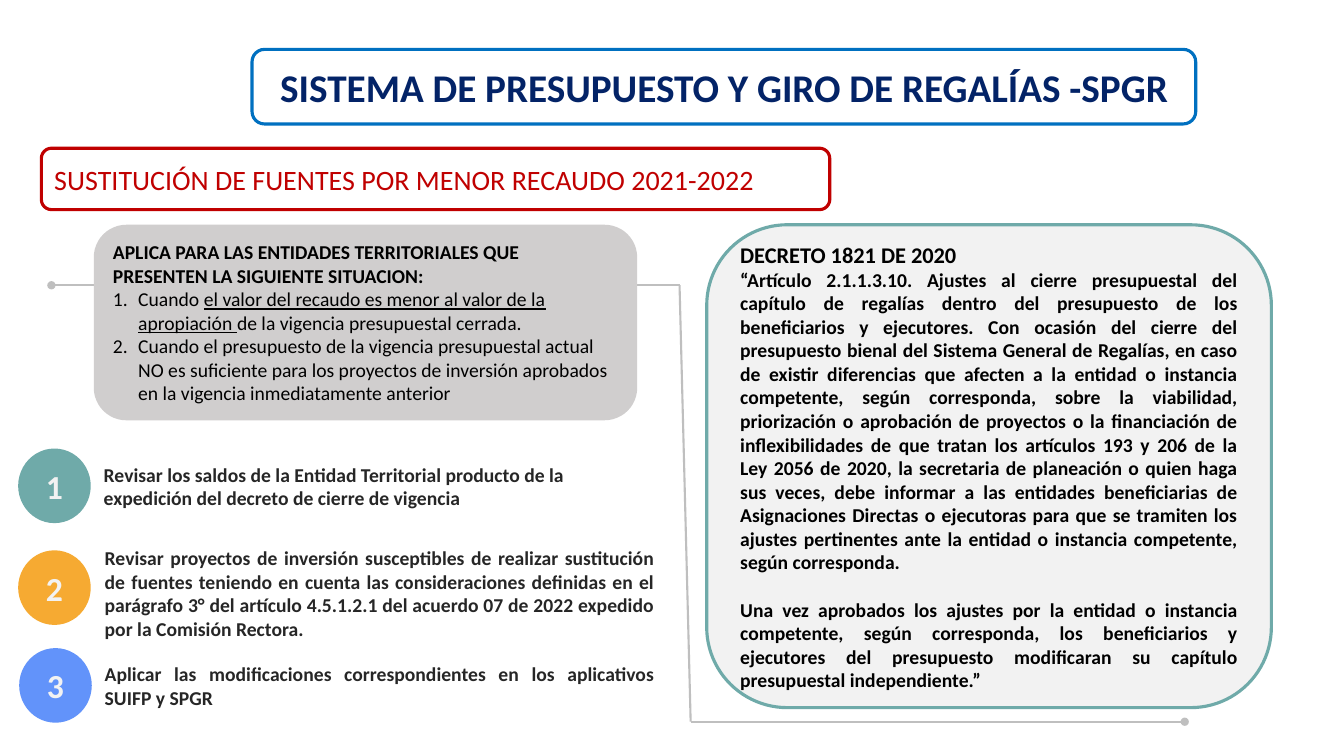
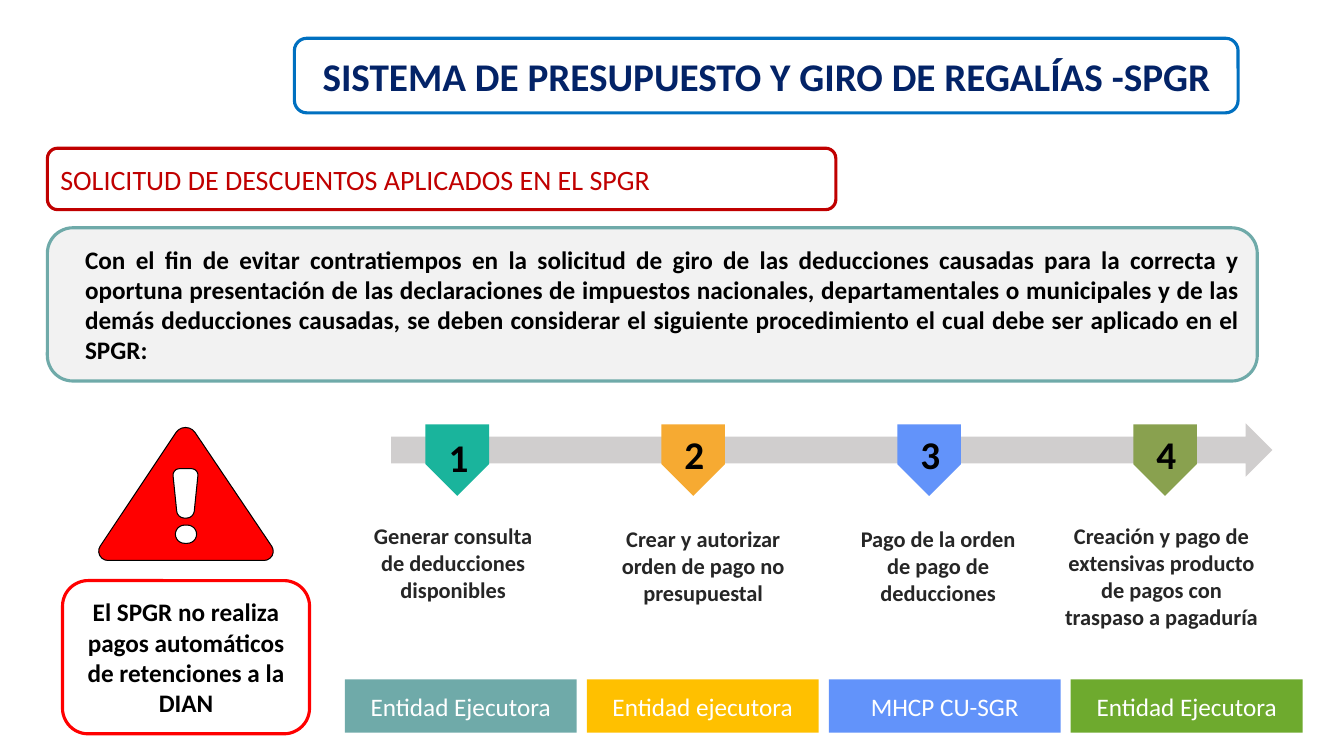
"""Two slides on the royalties budget and payment system."""
from dataclasses import dataclass
from math import dist
from typing import NamedTuple

from lxml import etree
from pptx import Presentation
from pptx.dml.color import RGBColor
from pptx.enum.shapes import MSO_CONNECTOR, MSO_SHAPE
from pptx.enum.text import MSO_ANCHOR, MSO_AUTO_SIZE, PP_ALIGN
from pptx.oxml.ns import qn
from pptx.util import Inches, Pt

ROUNDED, RECTANGLE, OVAL = MSO_SHAPE.ROUNDED_RECTANGLE, MSO_SHAPE.RECTANGLE, MSO_SHAPE.OVAL
PENTAGON, RIGHT_ARROW = MSO_SHAPE.PENTAGON, MSO_SHAPE.RIGHT_ARROW
STRAIGHT = MSO_CONNECTOR.STRAIGHT
LEFT, CENTER, JUSTIFY = PP_ALIGN.LEFT, PP_ALIGN.CENTER, PP_ALIGN.JUSTIFY
MIDDLE, NO_AUTOSIZE = MSO_ANCHOR.MIDDLE, MSO_AUTO_SIZE.NONE

BLACK = RGBColor(0x00, 0x00, 0x00)
WHITE = RGBColor(0xFF, 0xFF, 0xFF)
CHARCOAL = RGBColor(0x26, 0x26, 0x26)
PALE_GRAY = RGBColor(0xF2, 0xF2, 0xF2)
SILVER = RGBColor(0xD0, 0xCE, 0xCE)
LINE_GRAY = RGBColor(0xBF, 0xBF, 0xBF)
NAVY = RGBColor(0x03, 0x23, 0x67)
BLUE = RGBColor(0x00, 0x70, 0xC0)
PERIWINKLE = RGBColor(0x62, 0x93, 0xFA)
TEAL = RGBColor(0x6F, 0xAA, 0xA9)
EMERALD = RGBColor(0x1A, 0xB4, 0x9C)
ORANGE = RGBColor(0xF6, 0xAA, 0x32)
AMBER = RGBColor(0xFF, 0xC0, 0x00)
OLIVE = RGBColor(0x89, 0xA1, 0x4F)
GREEN = RGBColor(0x6E, 0xAA, 0x2E)
DARK_RED = RGBColor(0xC0, 0x00, 0x00)
RED = RGBColor(0xFF, 0x00, 0x00)

FONT = "Calibri"
FRAME_WIDTH = 2.25
TITLE = "SISTEMA DE PRESUPUESTO Y GIRO DE REGALÍAS -SPGR"


@dataclass(frozen=True)
class TextStyle:
    """Size, colour, weight and alignment of a text."""
    size: int
    color: RGBColor
    bold: bool = True
    align: PP_ALIGN = CENTER


class Step(NamedTuple):
    """One step of the deductions timeline."""
    color: RGBColor
    number_top: float
    caption_box: tuple
    caption: str
    owner_color: RGBColor
    owner: str


TITLE_STYLE = TextStyle(28, NAVY)
HEADING_STYLE = TextStyle(20, DARK_RED, False, LEFT)
CARD_HEADING = TextStyle(14, BLACK, True, LEFT)
CARD_ITEM = TextStyle(14, BLACK, False, LEFT)
DECREE_HEADING = TextStyle(16, BLACK, True, JUSTIFY)
DECREE_TEXT = TextStyle(14, BLACK, True, JUSTIFY)
CIRCLE_NUMBER = TextStyle(24, PALE_GRAY)
REVIEW_LEFT = TextStyle(14, CHARCOAL, True, LEFT)
REVIEW_JUSTIFIED = TextStyle(14, CHARCOAL, True, JUSTIFY)
INTRODUCTION = TextStyle(18, BLACK, True, JUSTIFY)
STEP_NUMBER = TextStyle(28, BLACK, True, LEFT)
STEP_CAPTION = TextStyle(16, CHARCOAL)
OWNER = TextStyle(18, WHITE, False)
WARNING = TextStyle(18, BLACK)

DECREE_ARTICLE = (
    "“Artículo 2.1.1.3.10. Ajustes al cierre presupuestal del capítulo de regalías dentro del "
    "presupuesto de los beneficiarios y ejecutores. Con ocasión del cierre del presupuesto bienal "
    "del Sistema General de Regalías, en caso de existir diferencias que afecten a la entidad o "
    "instancia competente, según corresponda, sobre la viabilidad, priorización o aprobación de "
    "proyectos o la financiación de inflexibilidades de que tratan los artículos 193 y 206 de la "
    "Ley 2056 de 2020, la secretaria de planeación o quien haga sus veces, debe informar a las "
    "entidades beneficiarias de Asignaciones Directas o ejecutoras para que se tramiten los ajustes "
    "pertinentes ante la entidad o instancia competente, según corresponda.")
DECREE_CLOSING = (
    "Una vez aprobados los ajustes por la entidad o instancia competente, según corresponda, los "
    "beneficiarios y ejecutores del presupuesto modificaran su capítulo presupuestal independiente.”")

REVIEWS = [
    (0.18, 4.45, TEAL, (0.93, 4.54, 5.65, 0.57), REVIEW_LEFT,
     "Revisar los saldos de la Entidad Territorial producto de la expedición del decreto de cierre "
     "de vigencia"),
    (0.18, 5.46, ORANGE, (0.94, 5.37, 5.65, 1.04), REVIEW_JUSTIFIED,
     "Revisar proyectos de inversión susceptibles de realizar sustitución de fuentes teniendo en "
     "cuenta las consideraciones definidas en el parágrafo 3° del artículo 4.5.1.2.1 del acuerdo 07 "
     "de 2022 expedido por la Comisión Rectora."),
    (0.19, 6.43, PERIWINKLE, (0.94, 6.52, 5.65, 0.57), REVIEW_JUSTIFIED,
     "Aplicar las modificaciones correspondientes en los aplicativos SUIFP y SPGR"),
]

STEPS = [
    Step(EMERALD, 4.25, (3.53, 5.13, 1.93, 0.91), "Generar consulta de deducciones disponibles",
         TEAL, "Entidad Ejecutora"),
    Step(ORANGE, 4.22, (6.01, 5.16, 1.93, 0.91), "Crear y autorizar orden de pago no presupuestal",
         AMBER, "Entidad ejecutora"),
    Step(PERIWINKLE, 4.22, (8.34, 5.16, 1.93, 0.91), "Pago de la orden de pago de deducciones",
         PERIWINKLE, "MHCP CU-SGR"),
    Step(OLIVE, 4.22, (10.41, 5.13, 2.22, 1.18),
         "Creación y pago de extensivas producto de pagos con traspaso a pagaduría",
         GREEN, "Entidad Ejecutora"),
]


def add_run(paragraph, text, style, underline=False):
    """Add one formatted run."""
    run = paragraph.add_run()
    run.text = text
    run.font.name = FONT
    run.font.size = Pt(style.size)
    run.font.bold = style.bold
    run.font.underline = underline
    run.font.color.rgb = style.color


def start_paragraph(frame, style, space_before=0):
    """Return the frame's next free paragraph, aligned and spaced."""
    first = frame.paragraphs[0]
    paragraph = frame.add_paragraph() if first.runs else first
    paragraph.alignment = style.align
    paragraph.space_before = Pt(space_before)
    return paragraph


def write(frame, text, style, space_before=0):
    """Add a paragraph of a single run."""
    paragraph = start_paragraph(frame, style, space_before)
    add_run(paragraph, text, style)
    return paragraph


def set_list_format(paragraph, indent, bullet, **attributes):
    """Give a paragraph its hanging indent and bullet element."""
    properties = paragraph._p.get_or_add_pPr()
    properties.set("marL", str(Inches(indent)))
    properties.set("indent", str(-Inches(indent)))
    etree.SubElement(properties, qn(bullet), **attributes)


def paint(shape, fill=None, line=None, width=FRAME_WIDTH):
    """Set fill and line, and remove the shadow."""
    shape.shadow.inherit = False
    if fill is None:
        shape.fill.background()
    else:
        shape.fill.solid()
        shape.fill.fore_color.rgb = fill
    if line is None:
        shape.line.fill.background()
    else:
        shape.line.color.rgb = line
        shape.line.width = Pt(width)


def add_box(slide, kind, box, fill=None, line=None, text=None, style=None):
    """Add a preset shape with optional text."""
    shape = slide.shapes.add_shape(kind, *map(Inches, box))
    paint(shape, fill, line)
    if text:
        write(shape.text_frame, text, style)
    return shape


def add_label(slide, box, text, style):
    """Add a wrapping text box."""
    frame = slide.shapes.add_textbox(*map(Inches, box)).text_frame
    frame.word_wrap = True
    write(frame, text, style)


def place_over(placeholder, shape, inset):
    """Lay a placeholder over a shape, inset at each side."""
    margin = Inches(inset)
    placeholder.left, placeholder.top = shape.left + margin, shape.top + margin
    placeholder.width, placeholder.height = shape.width - 2 * margin, shape.height - 2 * margin
    frame = placeholder.text_frame
    frame.auto_size = NO_AUTOSIZE
    frame.vertical_anchor = MIDDLE
    shape.element.addnext(placeholder.element)
    return frame


def add_line(slide, start, end, head=False, tail=False):
    """Add a grey connector with optional oval ends."""
    connector = slide.shapes.add_connector(STRAIGHT, *map(Inches, start + end))
    connector.line.color.rgb = LINE_GRAY
    connector.line.width = Pt(1.5)
    properties = connector.element.spPr
    line = properties.find(qn("a:ln"))
    for tag, wanted in (("a:headEnd", head), ("a:tailEnd", tail)):
        if wanted:
            etree.SubElement(line, qn(tag), type="oval")
    etree.SubElement(properties, qn("a:effectLst"))


def rounded_outline(corners, cut, parts=6):
    """Return the points of a polygon whose corners are circular arcs."""
    points = []
    for index, corner in enumerate(corners):
        start, end = (
            tuple(c + (n - c) * cut / dist(corner, neighbor) for c, n in zip(corner, neighbor))
            for neighbor in (corners[index - 1], corners[(index + 1) % len(corners)]))
        pull = dist(start, end) / (2 * cut)
        for part in range(parts + 1):
            t = part / parts
            weights = (1 - t) ** 2, 2 * t * (1 - t) * pull, t ** 2
            points.append(tuple(
                Inches(sum(w * v for w, v in zip(weights, values)) / sum(weights))
                for values in zip(start, corner, end)))
    return points


def add_warning_sign(slide):
    """Draw the red triangle with an exclamation mark cut out."""
    triangle = rounded_outline([(1.84, 4.15), (2.79, 5.56), (0.9, 5.56)], 0.17)
    bar = rounded_outline([(1.71, 4.65), (1.97, 4.65), (1.92, 5.14), (1.76, 5.14)], 0.07)
    dot = rounded_outline([(1.74, 5.21), (1.95, 5.21), (1.95, 5.39), (1.74, 5.39)], 0.09)
    builder = slide.shapes.build_freeform(*triangle[0])
    builder.add_line_segments(triangle[1:])
    for outline in (bar, dot):
        builder.move_to(*outline[0])
        builder.add_line_segments(outline[1:])
    paint(builder.convert_to_shape(), RED, BLACK, 0.75)


def add_slide(presentation, layout, title_corner, heading_left, heading):
    """Add a slide with its framed title and heading."""
    slide = presentation.slides.add_slide(presentation.slide_layouts[layout])
    title_frame = add_box(slide, ROUNDED, title_corner + (9.36, 0.74), line=BLUE)
    write(place_over(slide.shapes.title, title_frame, 0.04), TITLE, TITLE_STYLE)
    add_box(slide, ROUNDED, (heading_left, 1.47, 7.82, 0.61), None, DARK_RED, heading, HEADING_STYLE)
    return slide


def build_substitution(presentation):
    """Build the slide on substituting funding sources."""
    slide = add_slide(presentation, 1, (2.5, 0.49), 0.41,
                      "SUSTITUCIÓN DE FUENTES POR MENOR RECAUDO 2021-2022")
    decree = add_box(slide, ROUNDED, (7.01, 2.23, 5.6, 4.79), PALE_GRAY, TEAL,
                     "DECRETO 1821 DE 2020", DECREE_HEADING).text_frame
    write(decree, DECREE_ARTICLE, DECREE_TEXT)
    write(decree, DECREE_CLOSING, DECREE_TEXT, 17)

    add_line(slide, (0.51, 2.83), (6.74, 2.83), head=True)
    add_line(slide, (6.74, 2.83), (6.85, 7.16))
    add_line(slide, (6.85, 7.16), (11.75, 7.16), tail=True)

    card = add_box(slide, ROUNDED, (0.93, 2.23, 5.39, 1.94), SILVER)
    body = place_over(slide.placeholders[1], card, 0.09)
    heading = write(body, "APLICA PARA LAS ENTIDADES TERRITORIALES QUE PRESENTEN LA SIGUIENTE "
                    "SITUACION:", CARD_HEADING)
    set_list_format(heading, 0, "a:buNone")
    for runs in (
            [("Cuando ", False),
             ("el valor del recaudo es menor al valor de la apropiación ", True),
             ("de la vigencia presupuestal cerrada.", False)],
            [("Cuando el presupuesto de la vigencia presupuestal actual NO es suficiente para los "
              "proyectos de inversión aprobados en la vigencia inmediatamente anterior", False)]):
        item = start_paragraph(body, CARD_ITEM)
        set_list_format(item, 0.25, "a:buAutoNum", type="arabicPeriod")
        for text, underline in runs:
            add_run(item, text, CARD_ITEM, underline)

    for number, (left, top, color, box, style, text) in enumerate(REVIEWS, 1):
        add_box(slide, OVAL, (left, top, 0.72, 0.74), color, None, str(number), CIRCLE_NUMBER)
        add_label(slide, box, text, style)


def build_deductions(presentation):
    """Build the slide on requesting deductions."""
    slide = add_slide(presentation, 5, (2.92, 0.38), 0.47,
                      "SOLICITUD DE DESCUENTOS APLICADOS EN EL SPGR")
    introduction = add_box(
        slide, ROUNDED, (0.47, 2.26, 12, 1.52), PALE_GRAY, TEAL,
        "Con el fin de evitar contratiempos en la solicitud de giro de las deducciones causadas para "
        "la correcta y oportuna presentación de las declaraciones de impuestos nacionales, "
        "departamentales o municipales y de las demás deducciones causadas, se deben considerar el "
        "siguiente procedimiento el cual debe ser aplicado en el SPGR:", INTRODUCTION)
    introduction.text_frame.margin_left = Inches(0.3)

    add_box(slide, RIGHT_ARROW, (3.88, 4.2, 8.74, 0.53), SILVER)
    for index, step in enumerate(STEPS):
        marker_left = 4.18 + 2.34 * index
        marker = add_box(slide, PENTAGON, (marker_left, 4.25, 0.71, 0.63), step.color)
        marker.rotation = 90
        add_label(slide, (marker_left + 0.17, step.number_top, 0.31, 0.57), str(index + 1),
                  STEP_NUMBER)
        add_label(slide, step.caption_box, step.caption, STEP_CAPTION)
        add_box(slide, RECTANGLE, (3.42 + 2.4 * index, 6.74, 2.3, 0.53), step.owner_color, None,
                step.owner, OWNER)

    add_warning_sign(slide)
    add_box(slide, ROUNDED, (0.62, 5.76, 2.45, 1.52), None, RED,
            "El SPGR no realiza pagos automáticos de retenciones a la DIAN", WARNING)


def main():
    """Build and save the presentation."""
    presentation = Presentation()
    presentation.slide_width, presentation.slide_height = Inches(13.33), Inches(7.5)
    build_substitution(presentation)
    build_deductions(presentation)
    presentation.save("out.pptx")


if __name__ == "__main__":
    main()
